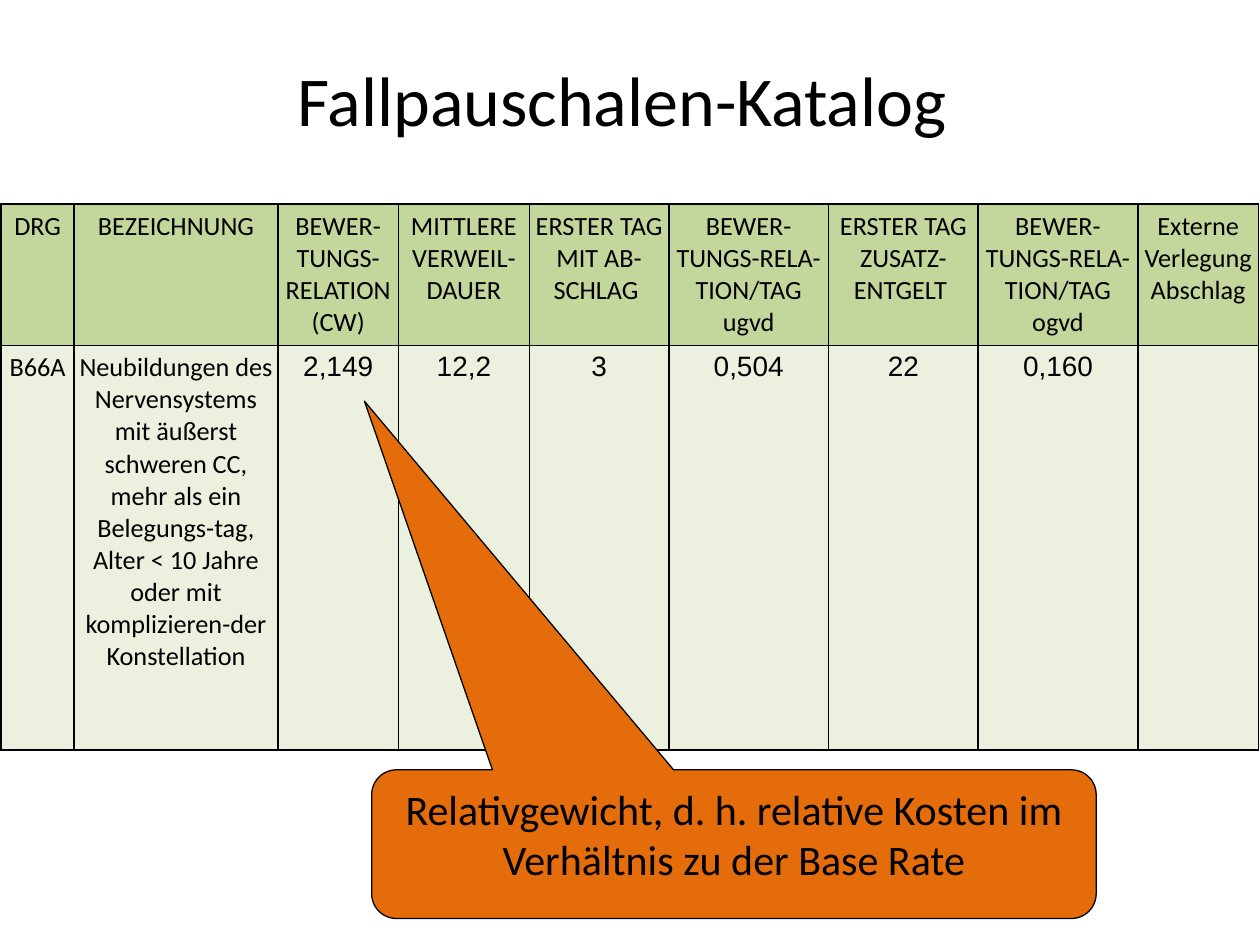
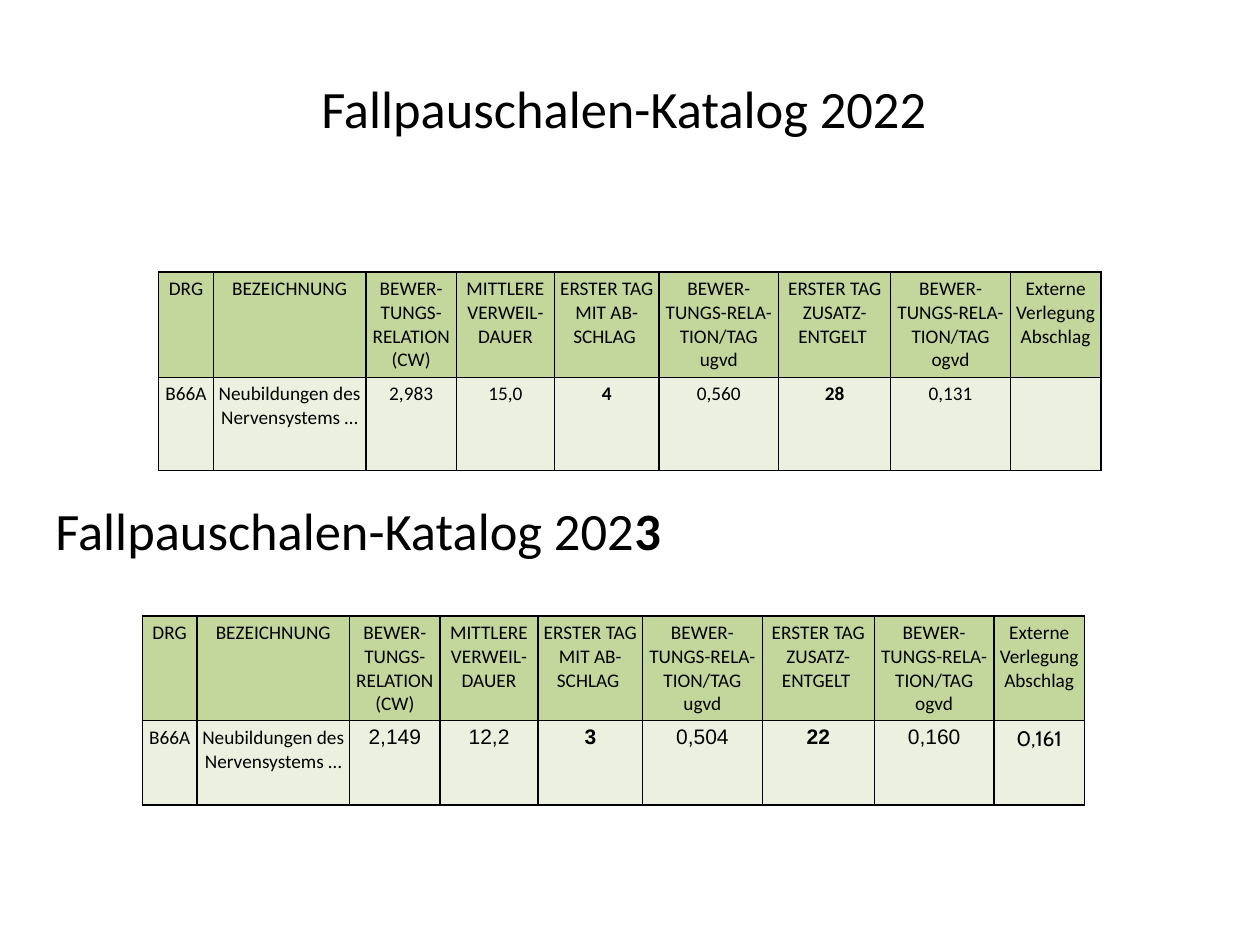
from lxml.etree import SubElement
from pptx import Presentation
from pptx.dml.color import RGBColor
from pptx.enum.shapes import MSO_SHAPE as Shape
from pptx.enum.text import MSO_ANCHOR as Anchor, PP_ALIGN as Align
from pptx.oxml.ns import qn
from pptx.util import Inches, Pt

BLACK = RGBColor(0x00, 0x00, 0x00)
HEADER_GREEN = RGBColor(0xC3, 0xD6, 0x9B)
ROW_GREEN = RGBColor(0xEB, 0xF1, 0xDE)
ORANGE = RGBColor(0xE4, 0x6C, 0x0A)

SLIDE_WIDTH, SLIDE_HEIGHT = Inches(10), Inches(7.5)
GRID_COLUMNS, GRID_ROWS = 100, 75
TITLE_BOX = (5, 3.2, 90, 15.1)

COLUMN_WEIGHTS = [0.58, 1.62, 0.96, 1.04, 1.11, 1.27, 1.19, 1.27, 0.96]
HEADERS = [
    "DRG",
    "BEZEICHNUNG",
    "BEWER-TUNGS-RELATION (CW)",
    "MITTLERE VERWEIL-DAUER",
    "ERSTER TAG MIT AB-SCHLAG ",
    "BEWER-TUNGS-RELA-TION/TAG ugvd",
    "ERSTER TAG ZUSATZ- ENTGELT ",
    "BEWER-TUNGS-RELA-TION/TAG ogvd",
    "Externe Verlegung Abschlag",
]
FIRST_VALUE_COLUMN = 2
DAY_LIMIT_COLUMNS = (4, 6)
SURCHARGE_COLUMN = 8
FULL_NAME = (
    "Neubildungen des Nervensystems mit äußerst schweren CC, mehr als "
    "ein Belegungs-tag, Alter < 10 Jahre oder mit komplizieren-der Konstellation"
)
SHORT_NAME = "Neubildungen des Nervensystems …"
VALUES_2022 = ["2,983", "15,0", "4", "0,560", "28", "0,131", ""]
VALUES_2023 = ["2,149", "12,2", "3", "0,504", "22", "0,160"]


def place(box):
    column, row, columns, rows = box
    return (
        round(SLIDE_WIDTH * column / GRID_COLUMNS),
        round(SLIDE_HEIGHT * row / GRID_ROWS),
        round(SLIDE_WIDTH * columns / GRID_COLUMNS),
        round(SLIDE_HEIGHT * rows / GRID_ROWS),
    )


def write(paragraph, text, size, font="Calibri", bold=False, align=Align.CENTER):
    paragraph.alignment = align
    run = paragraph.add_run()
    run.text = text
    run.font.name = font
    run.font.size = Pt(size)
    run.font.bold = bold
    run.font.color.rgb = BLACK


def add_title(slide, text, size, space_below):
    title = slide.shapes.title
    title.left, title.top, title.width, title.height = place(TITLE_BOX)
    frame = title.text_frame
    frame.vertical_anchor = Anchor.MIDDLE
    frame.margin_bottom = Inches(0.05 + space_below)
    write(frame.paragraphs[0], text, size)


def add_year_heading(slide, box, text, final_digit, size):
    frame = slide.shapes.add_textbox(*place(box)).text_frame
    frame.word_wrap = True
    frame.vertical_anchor = Anchor.MIDDLE
    frame.margin_left = frame.margin_right = Inches(0.07)
    frame.margin_top = Inches(0.04)
    frame.margin_bottom = Inches(0.53)
    paragraph = frame.paragraphs[0]
    paragraph.line_spacing = 0.9
    write(paragraph, text, size, align=Align.LEFT)
    write(paragraph, final_digit, size, bold=True, align=Align.LEFT)


def set_borders(cell):
    properties = cell._tc.get_or_add_tcPr()
    for position, side in enumerate(("lnL", "lnR", "lnT", "lnB")):
        line = SubElement(properties, qn(f"a:{side}"), w=str(Pt(1)))
        fill = SubElement(line, qn("a:solidFill"))
        SubElement(fill, qn("a:srgbClr"), val=str(BLACK))
        properties.insert(position, line)


def fill_cell(cell, text, color, margins, **text_format):
    cell.fill.solid()
    cell.fill.fore_color.rgb = color
    cell.margin_left = cell.margin_right = Inches(margins[0])
    cell.margin_top = cell.margin_bottom = Inches(margins[1])
    set_borders(cell)
    write(cell.text_frame.paragraphs[0], text, **text_format)


def add_catalog(slide, box, header_rows, name, values, size, margins,
                value_size=None, value_font="Calibri",
                surcharge_font="Calibri", bold_limits=True):
    left, top, width, height = place(box)
    table = slide.shapes.add_table(
        2, len(HEADERS), left, top, width, height).table
    table.first_row = table.horz_banding = False
    for column, weight in zip(table.columns, COLUMN_WEIGHTS):
        column.width = round(width * weight / sum(COLUMN_WEIGHTS))
    table.rows[0].height = round(SLIDE_HEIGHT * header_rows / GRID_ROWS)
    table.rows[1].height = height - table.rows[0].height

    for index, (header, entry) in enumerate(zip(HEADERS, ["B66A", name, *values])):
        fill_cell(table.cell(0, index), header, HEADER_GREEN, margins, size=size)
        text_format = {"size": size}
        if index >= FIRST_VALUE_COLUMN:
            text_format = {
                "size": value_size or size,
                "font": surcharge_font if index == SURCHARGE_COLUMN else value_font,
                "bold": bold_limits and index in DAY_LIMIT_COLUMNS,
            }
        fill_cell(table.cell(1, index), entry, ROW_GREEN, margins, **text_format)


def add_callout(slide, box, text, tip):
    callout = slide.shapes.add_shape(Shape.ROUNDED_RECTANGULAR_CALLOUT, *place(box))
    callout.shadow.inherit = False
    callout.adjustments[0], callout.adjustments[1] = tip
    callout.fill.solid()
    callout.fill.fore_color.rgb = ORANGE
    callout.line.color.rgb = BLACK
    callout.line.width = Pt(0.75)
    frame = callout.text_frame
    frame.word_wrap = True
    frame.vertical_anchor = Anchor.TOP
    write(frame.paragraphs[0], text, 24)


def build_explanation(slide):
    add_title(slide, "Fallpauschalen-Katalog ", 40, 0.58)
    add_catalog(slide, (0.1, 16.2, 99.8, 42.5), 10.4, FULL_NAME,
                [*VALUES_2023, ""], size=15, margins=(0.04, 0.05),
                value_size=16, value_font="Arial", bold_limits=False)
    add_callout(slide, (29.5, 61.1, 57.5, 11.8),
                "Relativgewicht, d. h. relative Kosten im Verhältnis zu der Base Rate",
                tip=(-0.51, -2.98))


def build_comparison(slide):
    margins = (0.03, 0.04)
    add_title(slide, "Fallpauschalen-Katalog 2022 ", 30, 0.44)
    add_catalog(slide, (12.6, 21.6, 74.8, 15.7), 8.3, SHORT_NAME,
                VALUES_2022, size=11, margins=margins)
    add_year_heading(slide, (3.7, 39.1, 90, 11.4),
                     "Fallpauschalen-Katalog 202", "3", 30)
    add_catalog(slide, (11.3, 48.9, 74.8, 15), 8.3, SHORT_NAME,
                [*VALUES_2023, "0,161"], size=11, margins=margins,
                value_size=12, value_font="Arial", surcharge_font="Cabin")


def main():
    presentation = Presentation()
    presentation.slide_width = SLIDE_WIDTH
    presentation.slide_height = SLIDE_HEIGHT
    title_only = presentation.slide_layouts.get_by_name("Title Only")
    for build in (build_explanation, build_comparison):
        build(presentation.slides.add_slide(title_only))
    presentation.save("out.pptx")


if __name__ == "__main__":
    main()
